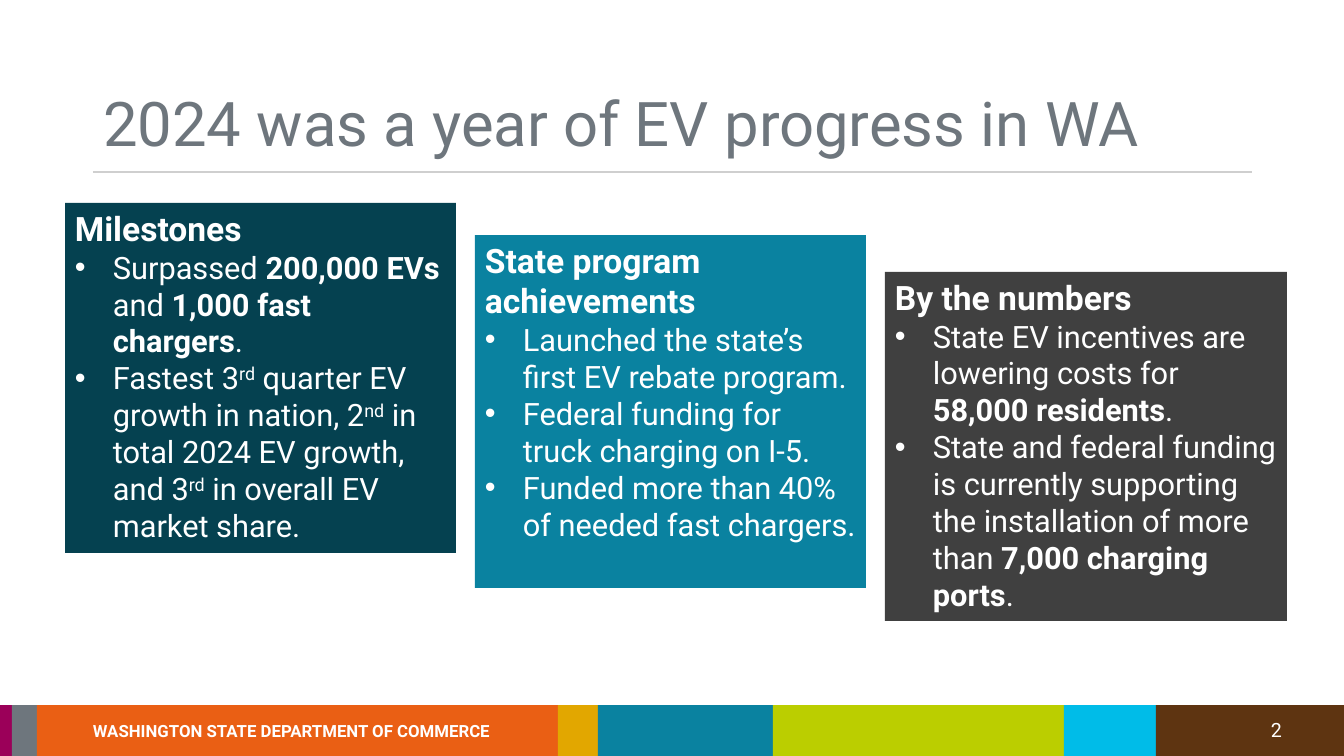
import pptx
import pptx.util
import pptx.dml.color
import pptx.enum.shapes
import pptx.enum.text
import pptx.oxml.ns
import lxml.etree

RGBColor = pptx.dml.color.RGBColor
WHITE = RGBColor(0xFF, 0xFF, 0xFF)
GRAY = RGBColor(0x6E, 0x76, 0x7D)
RULE_GRAY = RGBColor(0xCF, 0xCF, 0xCF)
PLUM = RGBColor(0x9B, 0x00, 0x59)
ORANGE = RGBColor(0xEA, 0x5F, 0x14)
GOLD = RGBColor(0xE2, 0xA7, 0x00)
TEAL = RGBColor(0x0A, 0x82, 0xA0)
LIME = RGBColor(0xBB, 0xCE, 0x00)
SKY = RGBColor(0x00, 0xBC, 0xE8)
BROWN = RGBColor(0x5E, 0x34, 0x11)
DEEP_TEAL = RGBColor(0x05, 0x41, 0x50)
CHARCOAL = RGBColor(0x40, 0x40, 0x40)

FONT = "Roboto"
WIDTH, HEIGHT = 1344, 756
SCALE = 12192000 / WIDTH
BULLET_INDENT = 38

BAND = [(PLUM, 12), (GRAY, 25), (ORANGE, 521), (GOLD, 40),
        (TEAL, 175), (LIME, 291), (SKY, 92), (BROWN, 188)]

BOLD = {"bold": True}
RAISED = {"superscript": True}
CARDS = [
    ((65, 203, 391, 350), DEEP_TEAL, "Milestones", [
        [("Surpassed ", {}), ("200,000 EVs ", BOLD), ("and ", {}),
         ("1,000 fast chargers", BOLD), (".", {})],
        [("Fastest 3", {}), ("rd", RAISED), (" quarter EV growth in nation, 2", {}),
         ("nd", RAISED), (" in total 2024 EV growth, and 3", {}),
         ("rd", RAISED), (" in overall EV market share.", {})],
    ]),
    ((475, 235, 391, 353), TEAL, "State program achievements", [
        [("Launched the state’s first EV rebate program.", {})],
        [("Federal funding for truck charging on I-5.", {})],
        [("Funded more than 40% of needed fast chargers.", {})],
    ]),
    ((885, 272, 402, 349), CHARCOAL, "By the numbers", [
        [("State EV incentives are lowering costs for ", {}),
         ("58,000 residents", BOLD), (".", {})],
        [("State and federal funding is currently supporting the installation of more than ", {}),
         ("7,000 charging ports", BOLD), (".", {})],
    ]),
]


def px(length):
    return pptx.util.Emu(round(length * SCALE))


def add_text(paragraph, text, size=22, color=WHITE, bold=False, superscript=False):
    run = paragraph.add_run()
    run.text = text
    run.font.name = FONT
    run.font.size = pptx.util.Pt(size)
    run.font.bold = bold
    run.font.color.rgb = color
    if superscript:
        run.font._element.set("baseline", "30000")


def add_rectangle(slide, box, color):
    shape = slide.shapes.add_shape(
        pptx.enum.shapes.MSO_SHAPE.RECTANGLE, *map(px, box))
    shape.shadow.inherit = False
    shape.fill.solid()
    shape.fill.fore_color.rgb = color
    shape.line.fill.background()
    return shape


def add_label(slide, box, text, **style):
    label = slide.shapes.add_textbox(*map(px, box))
    label.text_frame.word_wrap = False
    add_text(label.text_frame.paragraphs[0], text, **style)


def add_bullet(paragraph):
    properties = paragraph._p.get_or_add_pPr()
    properties.set("marL", str(px(BULLET_INDENT)))
    properties.set("indent", str(-px(BULLET_INDENT)))
    font = lxml.etree.SubElement(properties, pptx.oxml.ns.qn("a:buFont"))
    font.set("typeface", "Arial")
    bullet = lxml.etree.SubElement(properties, pptx.oxml.ns.qn("a:buChar"))
    bullet.set("char", "•")


def add_heading(slide, box, text):
    left, top, width, height = box
    title = slide.shapes.title
    title.left, title.top, title.width, title.height = map(px, box)
    frame = title.text_frame
    frame.word_wrap = True
    frame.auto_size = pptx.enum.text.MSO_AUTO_SIZE.NONE
    frame.vertical_anchor = pptx.enum.text.MSO_ANCHOR.BOTTOM
    paragraph = frame.paragraphs[0]
    paragraph.alignment = pptx.enum.text.PP_ALIGN.LEFT
    paragraph.line_spacing = 0.9
    add_text(paragraph, text, size=44, color=GRAY)
    rule_top = top + height + 7
    rule = slide.shapes.add_connector(
        pptx.enum.shapes.MSO_CONNECTOR.STRAIGHT,
        *map(px, (left, rule_top, left + width, rule_top)))
    rule.line.color.rgb = RULE_GRAY
    rule.line.width = pptx.util.Pt(1)
    lxml.etree.SubElement(rule._element.spPr, pptx.oxml.ns.qn("a:effectLst"))


def add_card(slide, box, color, heading, items):
    frame = add_rectangle(slide, box, color).text_frame
    frame.word_wrap = True
    frame.vertical_anchor = pptx.enum.text.MSO_ANCHOR.TOP
    paragraph = frame.paragraphs[0]
    paragraph.alignment = pptx.enum.text.PP_ALIGN.LEFT
    add_text(paragraph, heading, size=24, bold=True)
    for item in items:
        paragraph = frame.add_paragraph()
        paragraph.alignment = pptx.enum.text.PP_ALIGN.LEFT
        add_bullet(paragraph)
        for text, style in item:
            add_text(paragraph, text, **style)


def add_footer(slide, box, organization, number):
    left, top, width, height = box
    stripe_left = left
    for color, stripe_width in BAND:
        add_rectangle(slide, (stripe_left, top, stripe_width, height), color)
        stripe_left += stripe_width
    add_label(slide, (left + 83, top + 11, 426, 30), organization, size=12, bold=True)
    add_label(slide, (left + width - 83, top + 8, 44, 34), number, size=14)


def main():
    presentation = pptx.Presentation()
    presentation.slide_width = px(WIDTH)
    presentation.slide_height = px(HEIGHT)
    slide = presentation.slides.add_slide(presentation.slide_layouts[5])
    add_footer(slide, (0, 705, WIDTH, 51), "WASHINGTON STATE DEPARTMENT OF COMMERCE", "2")
    add_heading(slide, (93, 31, 1159, 134), "2024 was a year of EV progress in WA")
    for card in CARDS:
        add_card(slide, *card)
    presentation.save("out.pptx")


if __name__ == "__main__":
    main()
